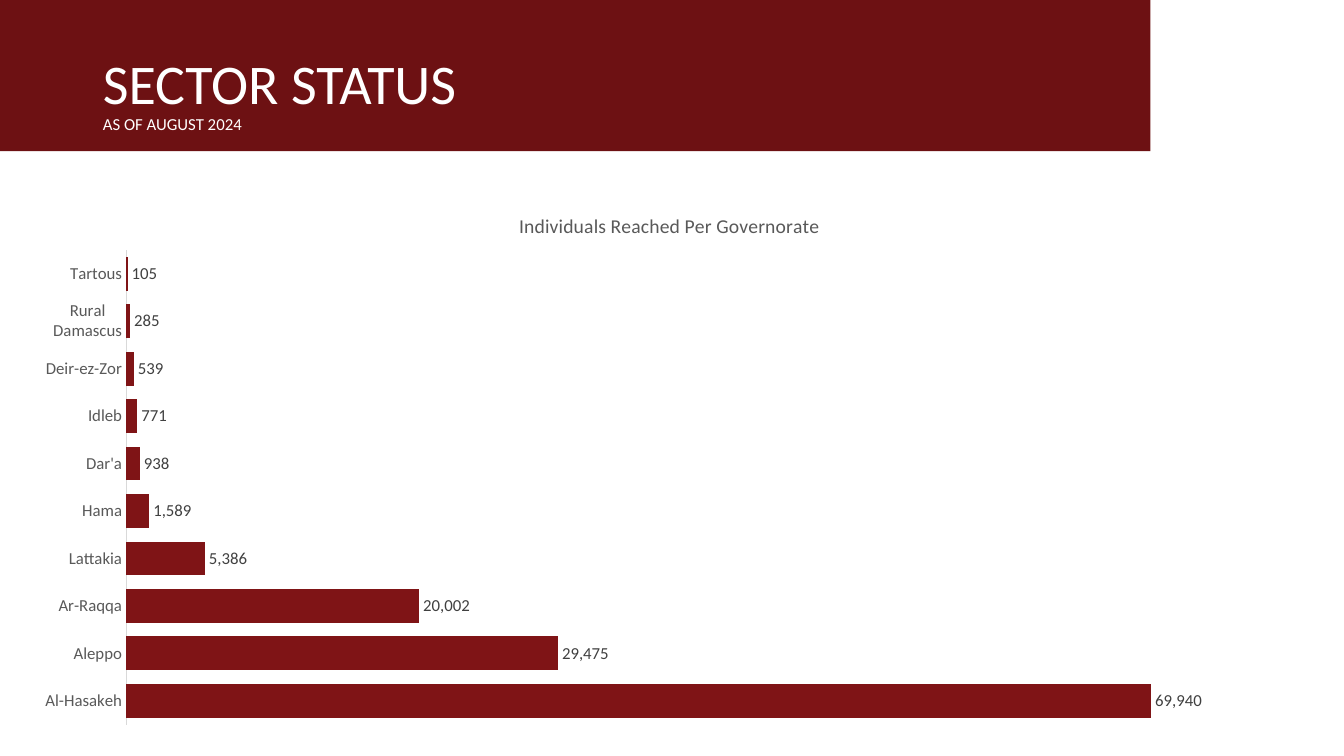
import pptx
import pptx.chart.data
import pptx.dml.color
import pptx.enum.chart
import pptx.enum.shapes
import pptx.enum.text
import pptx.oxml
import pptx.oxml.ns
import pptx.util
from dataclasses import dataclass

Inches = pptx.util.Inches

REACHED = {
    "Al-Hasakeh": 69940,
    "Aleppo": 29475,
    "Ar-Raqqa": 20002,
    "Lattakia": 5386,
    "Hama": 1589,
    "Dar'a": 938,
    "Idleb": 771,
    "Deir-ez-Zor": 539,
    "Rural Damascus": 285,
    "Tartous": 105,
}


@dataclass(frozen=True)
class Theme:
    font: str = "Calibri"
    banner: str = "6D1113"
    bar: str = "7F1416"
    heading: str = "FFFFFF"
    muted: str = "595959"
    value: str = "404040"
    axis: str = "D9D9D9"
    heading_size: int = 40
    chart_title_size: int = 14
    small_size: int = 12


def rgb(value):
    return pptx.dml.color.RGBColor.from_string(value)


def apply(target, values):
    for name, value in values.items():
        setattr(target, name, value)


def set_layout(parent, before, **fractions):
    """Place a chart part by fractions of the chart's size."""
    for old in parent.findall(pptx.oxml.ns.qn("c:layout")):
        parent.remove(old)
    inner = '<c:layoutTarget val="inner"/>' if "w" in fractions else ""
    modes = "".join(f'<c:{key}Mode val="edge"/>' for key in ("x", "y"))
    sizes = "".join(f'<c:{key} val="{value}"/>' for key, value in fractions.items())
    layout = pptx.oxml.parse_xml(
        f'<c:layout {pptx.oxml.ns.nsdecls("c")}><c:manualLayout>'
        f"{inner}{modes}{sizes}</c:manualLayout></c:layout>"
    )
    parent.find(pptx.oxml.ns.qn(before)).addprevious(layout)


class SlideBuilder:
    def __init__(self, slide, theme):
        self.slide = slide
        self.theme = theme

    def style_font(self, font, size, color):
        apply(font, {"name": self.theme.font, "size": pptx.util.Pt(size), "bold": False})
        font.color.rgb = rgb(color)

    def heading(self, lines, left, top, width, height):
        """Fill the title placeholder with (text, size) lines."""
        heading = self.slide.shapes.title
        apply(heading, {"left": Inches(left), "top": Inches(top),
                        "width": Inches(width), "height": Inches(height)})
        apply(heading.text_frame, {
            "word_wrap": True,
            "auto_size": pptx.enum.text.MSO_AUTO_SIZE.NONE,
            "vertical_anchor": pptx.enum.text.MSO_ANCHOR.MIDDLE,
        })
        paragraph = heading.text_frame.paragraphs[0]
        apply(paragraph, {"alignment": pptx.enum.text.PP_ALIGN.LEFT, "line_spacing": 0.9})
        for number, (text, size) in enumerate(lines):
            if number:
                paragraph.add_line_break()
            run = paragraph.add_run()
            run.text = text
            self.style_font(run.font, size, self.theme.heading)

    def banner(self, left, top, width, height):
        """Draw the colour band behind the heading."""
        banner = self.slide.shapes.add_shape(
            pptx.enum.shapes.MSO_SHAPE.RECTANGLE,
            Inches(left), Inches(top), Inches(width), Inches(height))
        banner.shadow.inherit = False
        banner.fill.solid()
        banner.fill.fore_color.rgb = rgb(self.theme.banner)
        banner.line.fill.background()
        self.slide.shapes.title.element.addprevious(banner.element)

    def bar_chart(self, title, values, left, top, width, height):
        theme = self.theme
        data = pptx.chart.data.CategoryChartData(number_format="#,##0")
        data.categories = list(values)
        data.add_series("Series 1", list(values.values()))
        chart = self.slide.shapes.add_chart(
            pptx.enum.chart.XL_CHART_TYPE.BAR_CLUSTERED,
            Inches(left), Inches(top), Inches(width), Inches(height), data).chart
        self.style_font(chart.font, theme.small_size, theme.muted)
        chart.has_legend = False

        chart.has_title = True
        caption = chart.chart_title.text_frame
        caption.text = title
        self.style_font(caption.paragraphs[0].runs[0].font,
                        theme.chart_title_size, theme.muted)
        chart.chart_title.include_in_layout = False
        set_layout(chart.chart_title.element, "c:overlay", x=0.38, y=0.04)

        governorates = chart.category_axis
        none = pptx.enum.chart.XL_TICK_MARK.NONE
        apply(governorates, {"major_tick_mark": none, "minor_tick_mark": none,
                             "has_major_gridlines": False})
        governorates.format.line.color.rgb = rgb(theme.axis)
        governorates.format.line.width = pptx.util.Pt(0.75)
        self.style_font(governorates.tick_labels.font, theme.small_size, theme.muted)
        apply(chart.value_axis, {"visible": False, "has_major_gridlines": False,
                                 "minimum_scale": 0, "maximum_scale": 80000})

        plot = chart.plots[0]
        apply(plot, {"gap_width": 40, "vary_by_categories": False,
                     "has_data_labels": True})
        bars = plot.series[0].format.fill
        bars.solid()
        bars.fore_color.rgb = rgb(theme.bar)
        apply(plot.data_labels, {
            "show_value": True,
            "number_format": "#,##0",
            "number_format_is_linked": False,
            "position": pptx.enum.chart.XL_LABEL_POSITION.OUTSIDE_END,
        })
        self.style_font(plot.data_labels.font, theme.small_size, theme.value)
        plot_area = governorates._element.getparent()
        set_layout(plot_area, "c:barChart",
                   x=round(1.06 / width, 4), y=round(0.63 / height, 4),
                   w=round(11.63 / width, 4), h=round(4.71 / height, 4))


def main():
    deck = pptx.Presentation()
    apply(deck, {"slide_width": Inches(13.33), "slide_height": Inches(7.5)})
    theme = Theme()
    builder = SlideBuilder(deck.slides.add_slide(deck.slide_layouts[5]), theme)
    builder.banner(0, 0, 11.41, 1.5)
    builder.heading([("SECTOR STATUS", theme.heading_size),
                     ("AS OF AUGUST 2024", theme.small_size)], 0.92, 0.4, 11.5, 1.09)
    builder.bar_chart("Individuals Reached Per Governorate", REACHED,
                      0.19, 1.85, 12.96, 5.45)
    deck.save("out.pptx")


if __name__ == "__main__":
    main()
